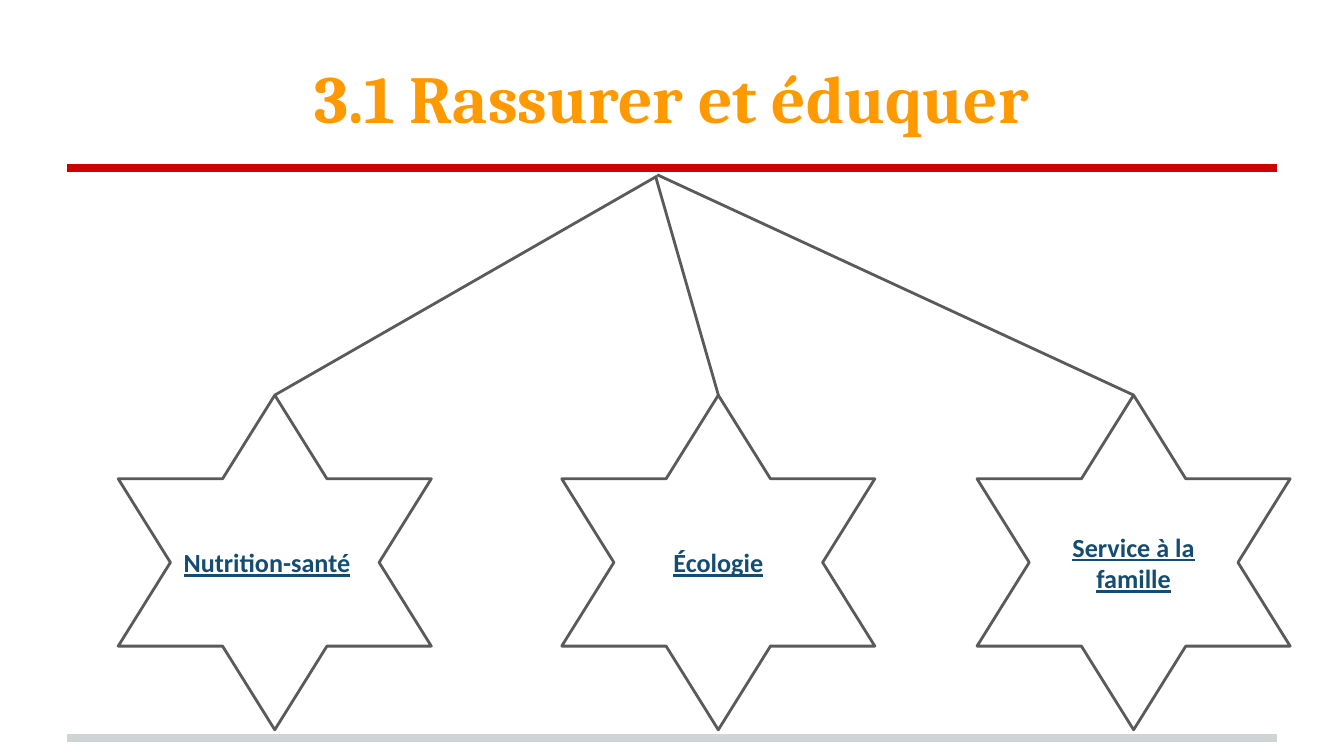
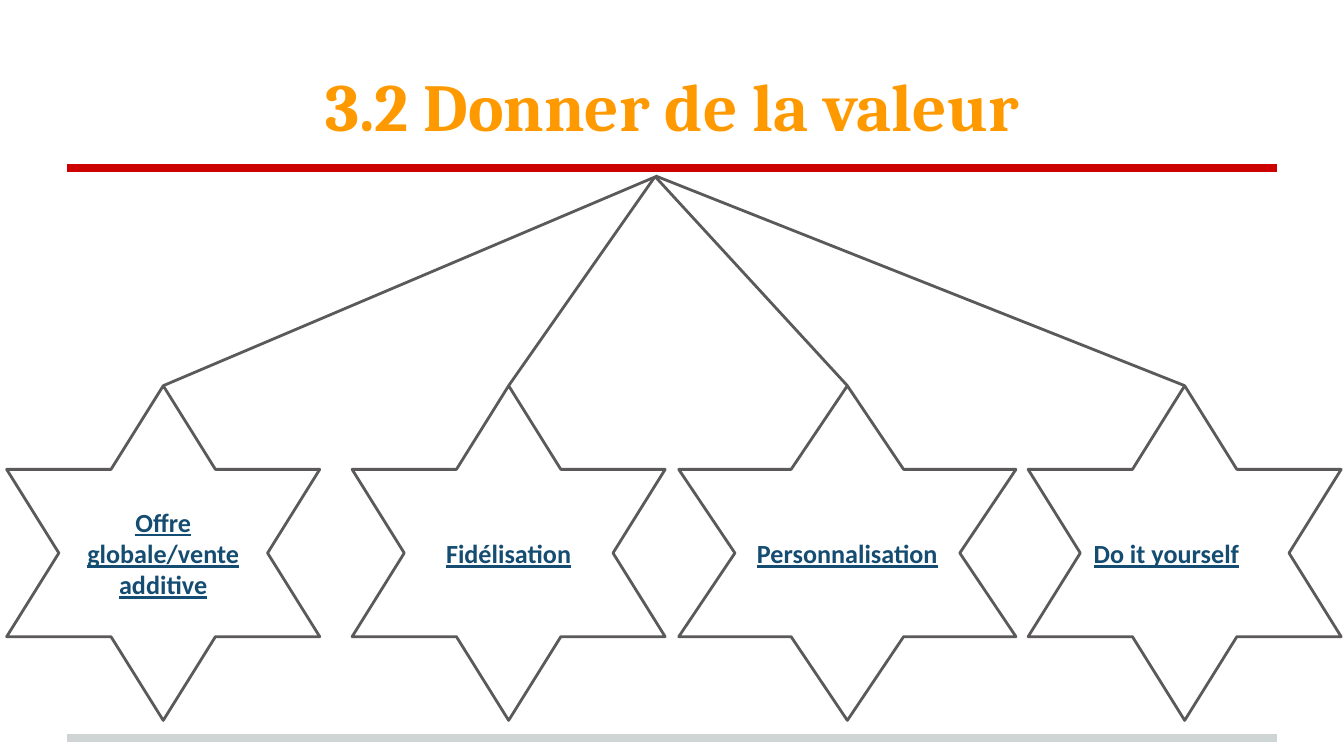
from dataclasses import dataclass

from lxml.etree import SubElement
from pptx import Presentation
from pptx.dml.color import RGBColor
from pptx.enum.shapes import MSO_CONNECTOR as Connector, MSO_SHAPE as Shape
from pptx.enum.text import MSO_ANCHOR as Anchor, PP_ALIGN as Align
from pptx.oxml.ns import qn
from pptx.util import Inches, Pt


@dataclass(frozen=True)
class Theme:
    title_color: RGBColor = RGBColor(0xFF, 0x99, 0x00)
    label_color: RGBColor = RGBColor(0x14, 0x4C, 0x72)
    outline: RGBColor = RGBColor(0x5B, 0x59, 0x5A)
    title_rule: RGBColor = RGBColor(0xCC, 0x02, 0x02)
    footer_rule: RGBColor = RGBColor(0xCF, 0xD4, 0xD4)
    title_font: str = "Cambria"
    label_font: str = "Calibri"
    title_size: float = 36
    label_size: float = 14
    rule_width: float = 4
    outline_width: float = 1.5


@dataclass(frozen=True)
class Star:
    label: str
    left: float
    apex: tuple[float, float]  # where its branch leaves the title rule
    width: float = 2.33
    align: Align = Align.CENTER


@dataclass(frozen=True)
class StarSlide:
    title: str
    title_top: float
    star_top: float
    stars: tuple[Star, ...]


THEME = Theme()
SLIDE_WIDTH = 10
SLIDE_HEIGHT = SLIDE_WIDTH * 9 / 16
MARGIN = 0.5
CONTENT_WIDTH = SLIDE_WIDTH - 2 * MARGIN
TITLE_HEIGHT, STAR_HEIGHT = 0.94, 2.49
TITLE_RULE_TOP, FOOTER_RULE_TOP = 1.25, 5.49

SLIDES = (
    StarSlide("3.1 Rassurer et éduquer", 0.18, 2.94, (
        Star("Nutrition-santé", 0.88, (4.89, 1.31), align=Align.LEFT),
        Star("Écologie", 4.18, (4.88, 1.32)),
        Star("Service à la famille", 7.27, (4.89, 1.3)),
    )),
    StarSlide("3.2 Donner de la valeur", 0.24, 2.87, (
        Star("Offre globale/vente additive", 0.05, (4.89, 1.31)),
        Star("Fidélisation", 2.62, (4.87, 1.32)),
        Star("Personnalisation", 5.05, (4.88, 1.32), width=2.51),
        Star("Do it yourself", 7.65, (4.88, 1.31), align=Align.LEFT),
    )),
)


def write_text(shape, text: str, *, font: str, size: float, color: RGBColor,
               align: Align = Align.CENTER, anchor: Anchor = Anchor.MIDDLE,
               underline: bool = False) -> None:
    frame = shape.text_frame
    frame.word_wrap = True
    frame.vertical_anchor = anchor
    frame.margin_left = frame.margin_right = Inches(0.1)
    frame.margin_top = frame.margin_bottom = Inches(0.1)
    paragraph = frame.paragraphs[0]
    paragraph.alignment = align
    run = paragraph.add_run()
    run.text = text
    run.font.name = font
    run.font.size = Pt(size)
    run.font.bold = True
    run.font.underline = underline
    run.font.color.rgb = color


def add_line(slide, start: tuple[float, float], end: tuple[float, float],
             color: RGBColor, width: float) -> None:
    points = (Inches(value) for value in (*start, *end))
    line = slide.shapes.add_connector(Connector.STRAIGHT, *points)
    line.line.color.rgb = color
    line.line.width = Pt(width)
    SubElement(line._element.spPr, qn("a:effectLst"))


def add_frame(slide, title: str, title_top: float) -> None:
    # Footer and title rules
    for top, color in ((FOOTER_RULE_TOP, THEME.footer_rule),
                       (TITLE_RULE_TOP, THEME.title_rule)):
        add_line(slide, (MARGIN, top), (MARGIN + CONTENT_WIDTH, top),
                 color, THEME.rule_width)
    # Title
    box = slide.shapes.add_textbox(Inches(MARGIN), Inches(title_top),
                                   Inches(CONTENT_WIDTH), Inches(TITLE_HEIGHT))
    write_text(box, title, font=THEME.title_font, size=THEME.title_size,
               color=THEME.title_color, anchor=Anchor.BOTTOM)


def add_star(slide, star: Star, top: float) -> None:
    # Branch from the title rule to the star's tip
    add_line(slide, star.apex, (star.left + star.width / 2, top),
             THEME.outline, THEME.outline_width)
    # Labelled star
    shape = slide.shapes.add_shape(
        Shape.STAR_6_POINT, Inches(star.left), Inches(top),
        Inches(star.width), Inches(STAR_HEIGHT))
    shape.shadow.inherit = False
    shape.fill.background()
    shape.line.color.rgb = THEME.outline
    shape.line.width = Pt(THEME.outline_width)
    write_text(shape, star.label, font=THEME.label_font, size=THEME.label_size,
               color=THEME.label_color, align=star.align, underline=True)


def main() -> None:
    presentation = Presentation()
    presentation.slide_width = Inches(SLIDE_WIDTH)
    presentation.slide_height = Inches(SLIDE_HEIGHT)
    blank = presentation.slide_layouts[6]
    for content in SLIDES:
        slide = presentation.slides.add_slide(blank)
        add_frame(slide, content.title, content.title_top)
        for star in content.stars:
            add_star(slide, star, content.star_top)
    presentation.save("out.pptx")


if __name__ == "__main__":
    main()
